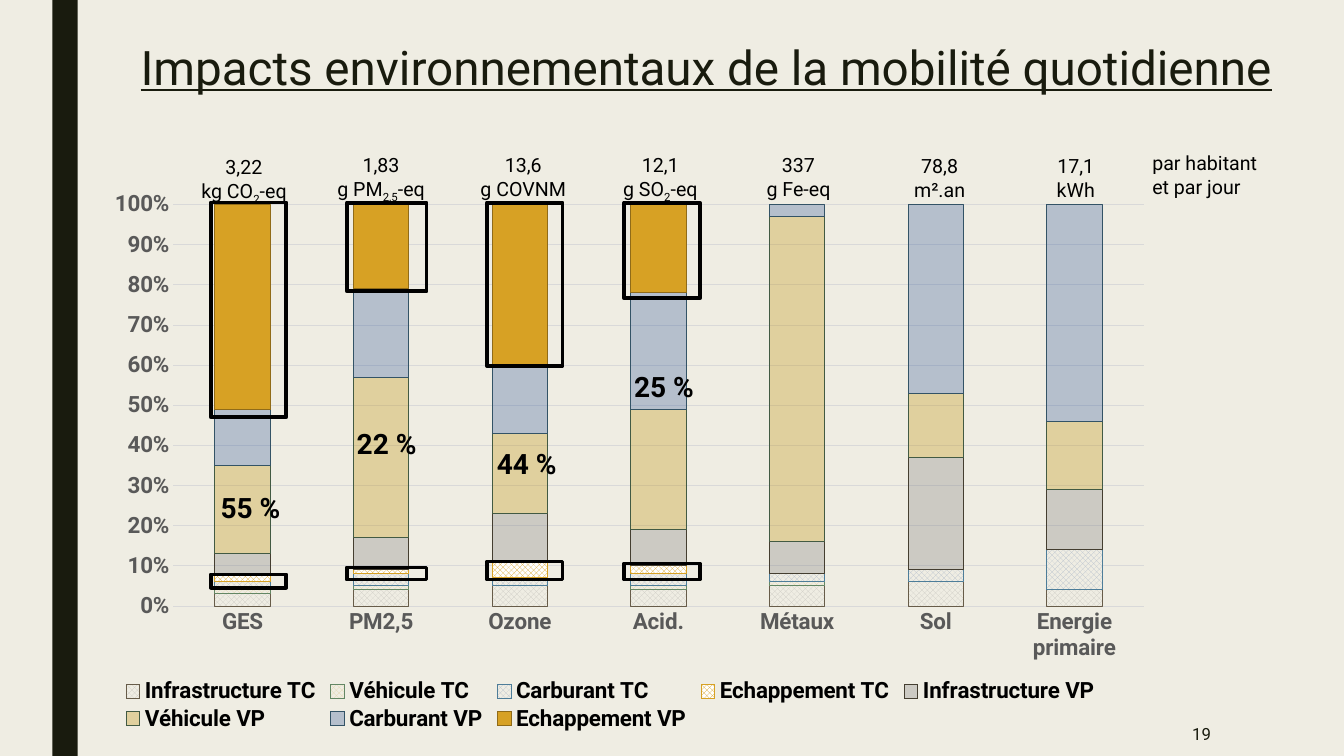
from lxml import etree
from pptx import Presentation
from pptx.chart.data import CategoryChartData
from pptx.dml.color import RGBColor
from pptx.enum.chart import XL_CHART_TYPE, XL_LEGEND_POSITION, XL_TICK_MARK
from pptx.enum.dml import MSO_PATTERN
from pptx.enum.shapes import MSO_SHAPE
from pptx.enum.text import MSO_ANCHOR, PP_ALIGN
from pptx.oxml.ns import qn
from pptx.util import Inches, Pt

FONT = "Roboto"
BG, DARK, BLACK, GREY, GRID = "EFEDE3", "191B0E", "000000", "595959", "D9D9D9"

CATEGORIES = ["GES", "PM2,5", "Ozone", "Acid.", "Métaux", "Sol", "Energie primaire"]
# name, values, outline, fill: (pattern front, back) or (colour, opacity %)
SERIES = [
    ("Infrastructure TC", (.03, .04, .05, .04, .05, .06, .04), "675C49", ("CCCAC3", BG)),
    ("Véhicule TC", (.01, .01, 0, .01, .01, 0, 0), "638764", ("E3D6AA", BG)),
    ("Carburant TC", (.02, .03, .02, .03, .02, .03, .1), "4D7D99", ("B5BFCC", BG)),
    ("Echappement TC", (.02, .01, .04, .02, 0, 0, 0), "D7A124", ("D7A124", "FFFFFF")),
    ("Infrastructure VP", (.05, .08, .12, .09, .08, .28, .15), "443E30", ("7C7C7C", 30)),
    ("Véhicule VP", (.22, .4, .2, .3, .81, .16, .17), "425A43", ("BF9000", 30)),
    ("Carburant VP", (.14, .22, .17, .29, .04, .47, .54), "335366", ("2F5597", 30)),
    ("Echappement VP", (.53, .21, .4, .23, 0, 0, 0), "906B18", ("D7A124", 100)),
]
# left, width, upper frame height, lower frame top and height, share, share top
HIGHLIGHTS = [
    (2.09, .75, 2.13, 5.7, .13, "55 %", 4.82),
    (3.44, .79, .88, 5.63, .12, "22 %", 4.18),
    (4.83, .75, 1.62, 5.57, .18, "44 %", 4.38),
    (6.19, .75, .95, 5.59, .16, "25 %", 3.62),
]
# left, top, amount, unit as (text, subscript, text)
TOTALS = [
    (1.77, 1.49, "3,22", ("kg CO", "2", "-eq")),
    (3.13, 1.47, "1,83", ("g PM", "2,5", "-eq")),
    (4.54, 1.47, "13,6", ("g COVNM",)),
    (5.9, 1.47, "12,1", ("g SO", "2", "-eq")),
    (7.27, 1.47, "337", ("g Fe-eq",)),
    (8.67, 1.48, "78,8", ("m².an",)),
    (10.02, 1.48, "17,1", ("kWh",)),
]


def rgb(value):
    return RGBColor.from_string(value)


def style(font, size, color, bold=False):
    font.name, font.size, font.bold = FONT, Pt(size), bold
    font.color.rgb = rgb(color)


def add_text(s, box, lines, size, color=BLACK, align=PP_ALIGN.LEFT,
             bold=False, anchor=MSO_ANCHOR.TOP):
    """Each line is a tuple of runs; every second run is a subscript."""
    tf = s.shapes.add_textbox(*map(Inches, box)).text_frame
    tf.word_wrap, tf.vertical_anchor = True, anchor
    for i, runs in enumerate(lines):
        p = tf.add_paragraph() if i else tf.paragraphs[0]
        p.alignment = align
        for j, text in enumerate(runs):
            r = p.add_run()
            r.text = text
            if j % 2:
                r._r.get_or_add_rPr().set("baseline", "-25000")
        style(p.font, size, color, bold)
    return tf


def add_rect(s, box, fill=None, line=None):
    sp = s.shapes.add_shape(MSO_SHAPE.RECTANGLE, *map(Inches, box))
    sp.shadow.inherit = False
    if fill:
        sp.fill.solid()
        sp.fill.fore_color.rgb = rgb(fill)
    else:
        sp.fill.background()
    if line:
        sp.line.color.rgb = rgb(line)
        sp.line.width = Pt(2.75)
    else:
        sp.line.fill.background()


def set_layout(parent, index, x, y, w, h, inner=False):
    for old in parent.findall(qn("c:layout")):
        parent.remove(old)
    layout = etree.Element(qn("c:layout"))
    manual = etree.SubElement(layout, qn("c:manualLayout"))
    settings = [("layoutTarget", "inner")] if inner else []
    settings += [("xMode", "edge"), ("yMode", "edge"), ("x", x), ("y", y), ("w", w), ("h", h)]
    for tag, value in settings:
        etree.SubElement(manual, qn("c:" + tag)).set("val", str(value))
    parent.insert(index, layout)


def fill_series(series, outline, colors):
    fill = series.format.fill
    color, other = colors
    if isinstance(other, str):
        fill.patterned()
        fill.pattern = MSO_PATTERN.LARGE_CHECKER_BOARD
        fill.back_color.rgb = rgb(other)
    else:
        fill.solid()
    fill.fore_color.rgb = rgb(color)
    if other in range(100):
        clr = series._element.find(".//" + qn("a:srgbClr"))
        etree.SubElement(clr, qn("a:alpha")).set("val", str(other * 1000))
    series.format.line.color.rgb = rgb(outline)
    series.format.line.width = Pt(.75)


def add_impact_chart(s, box):
    data = CategoryChartData(number_format="0%")
    data.categories = CATEGORIES
    for name, values, _, _ in SERIES:
        data.add_series(name, values)
    chart = s.shapes.add_chart(XL_CHART_TYPE.COLUMN_STACKED, *map(Inches, box), data).chart
    chart.has_title = False
    style(chart.font, 10, BLACK)
    plot = chart.plots[0]
    plot.gap_width, plot.overlap, plot.vary_by_categories = 150, 100, False
    for series, (_, _, outline, colors) in zip(plot.series, SERIES):
        fill_series(series, outline, colors)

    # Axes
    cat, val = chart.category_axis, chart.value_axis
    for axis in (cat, val):
        axis.major_tick_mark = axis.minor_tick_mark = XL_TICK_MARK.NONE
        style(axis.tick_labels.font, 16, GREY, True)
    val.minimum_scale, val.maximum_scale, val.major_unit = 0, 1, .1
    val.tick_labels.number_format = "0%"
    val.tick_labels.number_format_is_linked = False
    val.format.line.fill.background()
    for line in (cat.format.line, val.major_gridlines.format.line):
        line.color.rgb = rgb(GRID)
        line.width = Pt(.75)

    # Legend and placement
    chart.has_legend = True
    chart.legend.position = XL_LEGEND_POSITION.BOTTOM
    chart.legend.include_in_layout = False
    style(chart.legend.font, 16, BLACK, True)
    set_layout(chart.legend._element, 1, .01, .86, .95, .1)
    plot_area = chart._chartSpace.find(".//" + qn("c:plotArea"))
    set_layout(plot_area, 0, .081, .025, .937, .71, inner=True)


def add_highlights(s, top):
    for left, width, height, low_top, low_height, share, share_top in HIGHLIGHTS:
        add_rect(s, (left, top, width, height), line=BLACK)
        add_rect(s, (left, low_top, width, low_height), line=BLACK)
        add_text(s, (left, share_top, .94, .44), [(share,)], 20, bold=True)


def add_totals(s):
    for left, top, amount, unit in TOTALS:
        add_text(s, (left, top, 1.3, .57), [(amount,), unit], 14, align=PP_ALIGN.CENTER)
    add_text(s, (11.33, 1.45, 1.41, .57), [("par habitant et par jour",)], 14)


def add_frame(s):
    s.background.fill.solid()
    s.background.fill.fore_color.rgb = rgb(BG)
    add_rect(s, (.52, 0, .25, 7.5), fill=DARK)
    tf = add_text(s, (1.07, .4, 11.87, .59),
                  [("Impacts environnementaux de la mobilité quotidienne",)],
                  34, DARK, PP_ALIGN.CENTER, anchor=MSO_ANCHOR.MIDDLE)
    tf.paragraphs[0].font.underline = True
    tf.paragraphs[0].line_spacing = .89
    add_text(s, (10.36, 7.06, 1.75, .44), [("19",)], 12, DARK,
             PP_ALIGN.RIGHT, anchor=MSO_ANCHOR.MIDDLE)


def main():
    prs = Presentation()
    prs.slide_width, prs.slide_height = Inches(13.33), Inches(7.5)
    s = prs.slides.add_slide(prs.slide_layouts[6])
    add_frame(s)
    add_impact_chart(s, (1.07, 1.89, 10.28, 5.61))
    add_highlights(s, 2.01)
    add_totals(s)
    prs.save("out.pptx")


if __name__ == "__main__":
    main()
